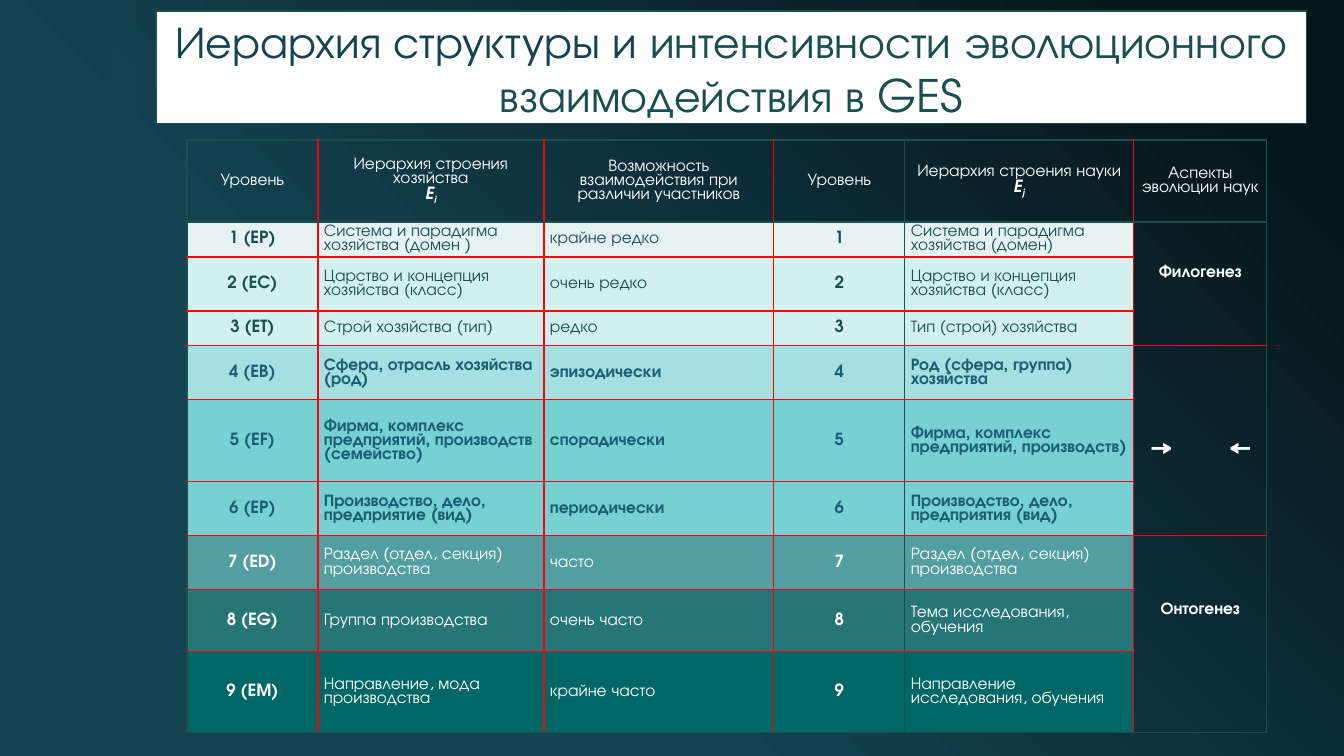
from dataclasses import dataclass
from itertools import product

from lxml.etree import SubElement
from pptx import Presentation
from pptx.dml.color import RGBColor
from pptx.enum.shapes import MSO_SHAPE
from pptx.enum.text import MSO_ANCHOR, MSO_AUTO_SIZE, PP_ALIGN
from pptx.oxml.ns import qn
from pptx.util import Pt

PX = 914400 / 100.8


@dataclass(frozen=True)
class Theme:
    font: str = "TeX Gyre Adventor"
    night: str = "06171C"
    sea: str = "134251"
    teal: str = "1A4E4F"
    blue: str = "1B5D72"
    white: str = "FFFFFF"
    red: str = "FF0000"
    title_size: int = 32
    text_size: int = 12
    arrow_size: int = 16


THEME = Theme()
LEFT, CENTER = PP_ALIGN.LEFT, PP_ALIGN.CENTER

COL_WIDTHS = [131, 226, 230, 131, 229, 133]
ROW_HEIGHTS = [82, 35, 54, 35, 54, 82, 54, 54, 62, 81]
LEVEL_COLS = (0, 3)
ASPECT_COL = 5

# Each cell is a list of paragraphs; a (letter, index) pair is a symbol.
HEADER = [
    [["Уровень"]],
    [["Иерархия строения хозяйства"], [("E", "i")]],
    [["Возможность взаимодействия при различии участников"]],
    [["Уровень"]],
    [["Иерархия строения науки ", ("E", "j")]],
    [["Аспекты"], ["эволюции наук"]],
]

# fill, text colour, bold text, then the five cells
LEVELS = [
    ("E6F2F2", THEME.teal, False, "1 (EP)", "Система и парадигма хозяйства (домен )",
     "крайне редко", "1", "Система и парадигма хозяйства (домен)"),
    ("D2F0F0", THEME.teal, False, "2 (EC)", "Царство и концепция хозяйства (класс)",
     "очень редко", "2", "Царство и концепция хозяйства (класс)"),
    ("D2F0F0", THEME.teal, False, "3 (ET)", "Строй хозяйства (тип)",
     "редко", "3", "Тип (строй) хозяйства"),
    ("A4E0E2", THEME.blue, True, "4 (EB)", "Сфера, отрасль хозяйства (род)",
     "эпизодически", "4", "Род (сфера, группа) хозяйства"),
    ("77D1D3", THEME.blue, True, "5 (EF)",
     "Фирма, комплекс предприятий, производств (семейство)",
     "спорадически", "5", "Фирма, комплекс предприятий, производств)"),
    ("77D1D3", THEME.blue, True, "6 (EP)", "Производство, дело, предприятие (вид)",
     "периодически", "6", "Производство, дело, предприятия (вид)"),
    ("529EA1", THEME.white, False, "7 (ED)", "Раздел (отдел, секция) производства",
     "часто", "7", "Раздел (отдел, секция) производства"),
    ("267577", THEME.white, False, "8 (EG)", "Группа производства",
     "очень часто", "8", "Тема исследования, обучения"),
    ("006666", THEME.white, False, "9 (EM)", "Направление, мода производства",
     "крайне часто", "9", "Направление исследования, обучения"),
]
ASPECTS = {2: "Филогенез", 8: "Онтогенез"}
ARROW_ROW = 5


def px(n):
    return round(n * PX)


def set_all(obj, **values):
    for name, value in values.items():
        setattr(obj, name, value)


def add_run(p, text, color, size=THEME.text_size, **style):
    r = p.add_run()
    r.text = text
    set_all(r.font, name=THEME.font, size=Pt(size), **style)
    r.font.color.rgb = RGBColor.from_string(color)
    return r


def add_symbol(p, letter, index, color):
    add_run(p, letter, color, bold=True, italic=True)
    r = add_run(p, index, color, bold=True, italic=True)
    r.font._element.set("baseline", "-25000")


def write_cell(cell, paragraphs, color, align=CENTER, bold=False):
    tf = cell.text_frame
    for i, parts in enumerate(paragraphs):
        p = tf.add_paragraph() if i else tf.paragraphs[0]
        set_all(p, alignment=align, line_spacing=0.9)
        for part in parts:
            if isinstance(part, tuple):
                add_symbol(p, *part, color)
            else:
                add_run(p, part, color, bold=bold)


def write_arrows(cell):
    """Two facing arrows, the second one at a tab stop."""
    set_all(cell, margin_left=px(16), margin_top=px(16))
    p = cell.text_frame.paragraphs[0]
    p.alignment = LEFT
    tabs = SubElement(p._p.get_or_add_pPr(), qn("a:tabLst"))
    SubElement(tabs, qn("a:tab"), pos=str(px(79)), algn="l")
    add_run(p, "→\t←", THEME.white, THEME.arrow_size, bold=True)


def row_line(row, col):
    """Colour of the line above a row, None inside an aspect group."""
    if row in (0, 1, len(ROW_HEIGHTS)):
        return THEME.teal
    return None if col == ASPECT_COL and row not in (4, 7) else THEME.red


def col_line(col):
    return THEME.teal if col in (0, 4, len(COL_WIDTHS)) else THEME.red


def set_borders(cell, row, col):
    tc_pr = cell._tc.get_or_add_tcPr()
    sides = {"L": col_line(col), "R": col_line(col + 1),
             "T": row_line(row, col), "B": row_line(row + 1, col)}
    for side, color in sides.items():
        ln = SubElement(tc_pr, qn(f"a:ln{side}"), w=str(Pt(1)))
        if color:
            fill = SubElement(ln, qn("a:solidFill"))
            SubElement(fill, qn("a:srgbClr"), val=color)
        else:
            SubElement(ln, qn("a:noFill"))


def add_levels_table(slide):
    table = slide.shapes.add_table(
        len(ROW_HEIGHTS), len(COL_WIDTHS), px(187), px(140),
        px(sum(COL_WIDTHS)), px(sum(ROW_HEIGHTS))).table
    set_all(table, first_row=False, horz_banding=False)
    for column, width in zip(table.columns, COL_WIDTHS):
        column.width = px(width)
    for row, height in zip(table.rows, ROW_HEIGHTS):
        row.height = px(height)

    for row, col in product(range(len(ROW_HEIGHTS)), range(len(COL_WIDTHS))):
        cell = table.cell(row, col)
        set_all(cell, margin_left=px(6), margin_right=px(6), margin_top=0,
                margin_bottom=0, vertical_anchor=MSO_ANCHOR.MIDDLE)
        set_borders(cell, row, col)
        if row and col != ASPECT_COL:
            fill, color, bold, *texts = LEVELS[row - 1]
            cell.fill.solid()
            cell.fill.fore_color.rgb = RGBColor.from_string(fill)
            level = col in LEVEL_COLS
            write_cell(cell, [[texts[col]]], color,
                       CENTER if level else LEFT, level or bold)
            continue
        cell.fill.background()
        if row == 0:
            write_cell(cell, HEADER[col], THEME.white)
        elif row in ASPECTS:
            cell.margin_bottom = px(22)
            write_cell(cell, [[ASPECTS[row]]], THEME.white, bold=True)
        elif row == ARROW_ROW:
            write_arrows(cell)
        else:
            cell.text_frame.paragraphs[0].font.size = Pt(THEME.text_size)


def set_background(slide):
    fill = slide.background.fill
    fill.gradient()
    fill.gradient_angle = 225
    stops = ((0.1, THEME.night), (0.65, THEME.sea))
    for stop, (position, color) in zip(fill.gradient_stops, stops):
        stop.position = position
        stop.color.rgb = RGBColor.from_string(color)


def add_side_band(slide):
    sp = slide.shapes.add_shape(MSO_SHAPE.RECTANGLE, px(111), 0, px(25), px(756))
    sp.shadow.inherit = False
    sp.line.fill.background()
    sp.fill.solid()
    sp.fill.fore_color.rgb = RGBColor.from_string(THEME.sea)
    color = sp._element.spPr.find(".//" + qn("a:srgbClr"))
    SubElement(color, qn("a:alpha"), val="60000")


def set_title(slide):
    sp = slide.shapes.title
    set_all(sp, left=px(156), top=px(11), width=px(1151), height=px(113))
    sp.fill.solid()
    sp.fill.fore_color.rgb = RGBColor.from_string(THEME.white)
    sp.line.color.rgb = RGBColor.from_string(THEME.teal)
    sp.line.width = Pt(0.75)
    tf = sp.text_frame
    set_all(tf, word_wrap=True, auto_size=MSO_AUTO_SIZE.NONE,
            vertical_anchor=MSO_ANCHOR.MIDDLE)
    p = tf.paragraphs[0]
    p.alignment = CENTER
    add_run(p, "Иерархия структуры и ", THEME.sea, THEME.title_size)
    add_run(p, "интенсивности эволюционного взаимодействия в GES",
            THEME.teal, THEME.title_size)


def main():
    prs = Presentation()
    set_all(prs, slide_width=px(1344), slide_height=px(756))
    slide = prs.slides.add_slide(prs.slide_layouts[5])
    set_background(slide)
    add_side_band(slide)
    add_levels_table(slide)
    set_title(slide)
    prs.save("out.pptx")


if __name__ == "__main__":
    main()
